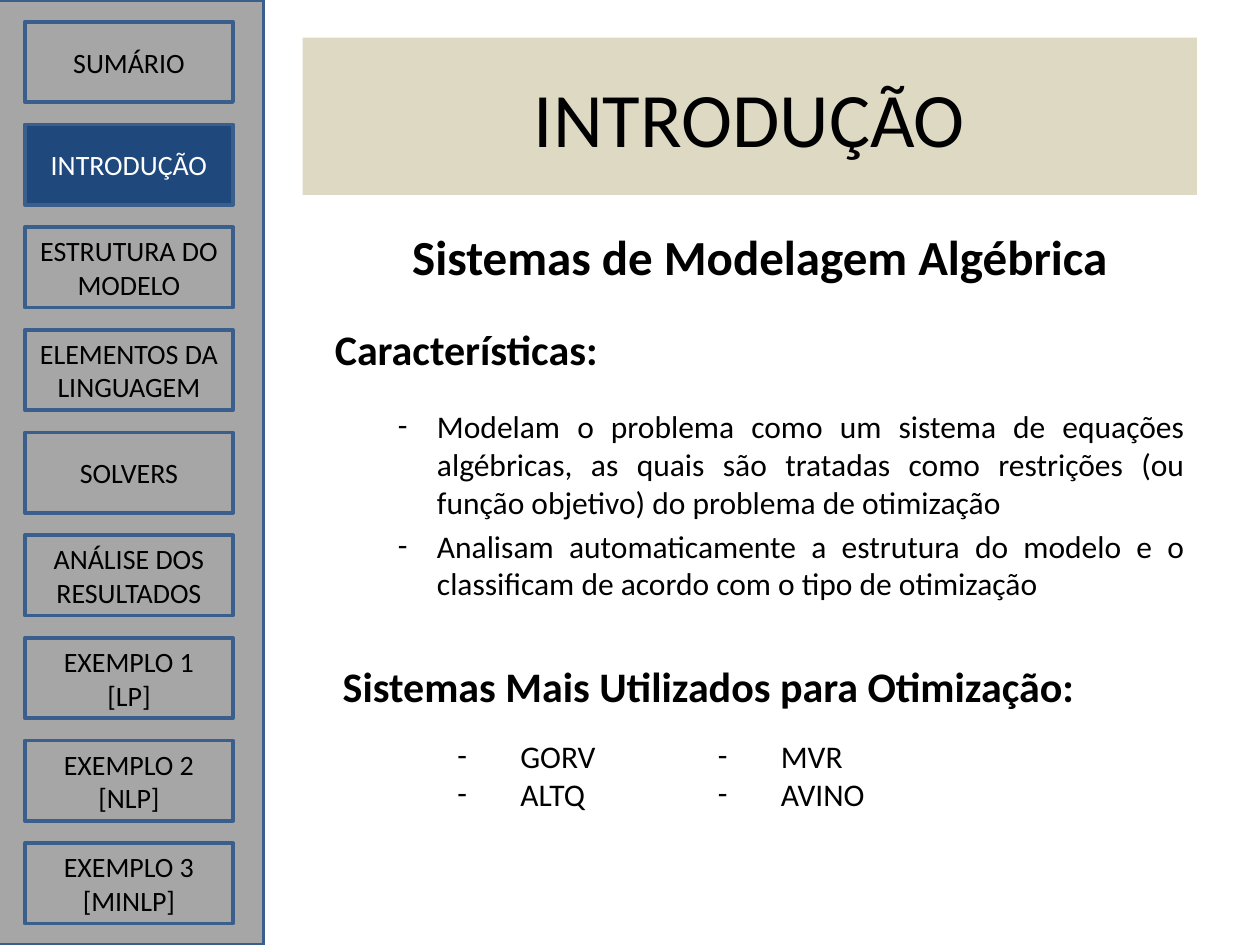
from pptx import Presentation
from pptx.dml.color import RGBColor
from pptx.enum.shapes import MSO_SHAPE
from pptx.enum.text import MSO_ANCHOR, PP_ALIGN
from pptx.oxml.ns import qn
from pptx.util import Cm, Pt
from lxml.etree import SubElement

BLACK = RGBColor(0x00, 0x00, 0x00)
WHITE = RGBColor(0xFF, 0xFF, 0xFF)
SAND = RGBColor(0xDD, 0xD9, 0xC3)
GREY = RGBColor(0xA6, 0xA6, 0xA6)
NAVY = RGBColor(0x1F, 0x49, 0x7D)
EDGE = RGBColor(0x3A, 0x5F, 0x8C)


def write(box, rows):
    frame = box.text_frame
    frame.word_wrap = True
    for index, (text, size, color, bold, layout, indent) in enumerate(rows):
        para = frame.paragraphs[0] if index == 0 else frame.add_paragraph()
        for name, value in layout.items():
            setattr(para, name, value)
        span = para.add_run()
        span.text = text
        font = {"name": "Calibri", "size": Pt(size), "bold": bold}
        for name, value in font.items():
            setattr(span.font, name, value)
        span.font.color.rgb = color
        if indent:
            margin, hanging = indent
            props = para._p.get_or_add_pPr()
            props.set("marL", str(Cm(margin)))
            props.set("indent", str(Cm(-hanging)))
            if hanging:
                SubElement(props, qn("a:buFont")).set("typeface", "Calibri")
                SubElement(props, qn("a:buChar")).set("char", "-")


def add_panel(page, place, fill, edge=None):
    panel = page.shapes.add_shape(MSO_SHAPE.RECTANGLE, *map(Cm, place))
    panel.shadow.inherit = False
    panel.fill.solid()
    panel.fill.fore_color.rgb = fill
    if edge:
        panel.line.color.rgb = edge
        panel.line.width = Pt(2)
    else:
        panel.line.fill.background()
    panel.text_frame.vertical_anchor = MSO_ANCHOR.MIDDLE
    return panel


deck = Presentation()
deck.slide_width, deck.slide_height = Cm(25.4), Cm(19.05)
page = deck.slides.add_slide(deck.slide_layouts[6])
centred = {"alignment": PP_ALIGN.CENTER}
justified = {"alignment": PP_ALIGN.JUSTIFY}

title = add_panel(page, (6.1, 0.76, 18.03, 3.17), SAND)
write(title, [("INTRODUÇÃO", 44, BLACK, False, centred, None)])

add_panel(page, (-0.1, 0, 5.41, 19.05), GREY, EDGE)
menu = [
    ["SUMÁRIO"], ["INTRODUÇÃO"], ["ESTRUTURA DO MODELO"],
    ["ELEMENTOS DA LINGUAGEM"], ["SOLVERS"], ["ANÁLISE DOS RESULTADOS"],
    ["EXEMPLO 1", "[LP]"], ["EXEMPLO 2", "[NLP]"], ["EXEMPLO 3", "[MINLP]"],
]
for row, labels in enumerate(menu):
    fill, color = (NAVY, WHITE) if row == 1 else (GREY, BLACK)
    button = add_panel(page, (0.5, 0.44 + 2.07 * row, 4.2, 1.62), fill, EDGE)
    write(button, [(label, 16, color, False, centred, None) for label in labels])

content = [
    ("Sistemas de Modelagem Algébrica", 28, True, centred, 0, None),
    ("Características:", 24, True, justified, 21.5, None),
    ("Modelam o problema como um sistema de equações algébricas, as quais são "
     "tratadas como restrições (ou função objetivo) do problema de otimização",
     18, False, justified, 19, (2.06, 0.79)),
    ("Analisam automaticamente a estrutura do modelo e o classificam de acordo "
     "com o tipo de otimização", 18, False, justified, 3.6, (2.06, 0.79)),
    ("Sistemas Mais Utilizados para Otimização:", 24, True, justified, 33, (0.16, 0)),
]
body = page.shapes.add_textbox(Cm(6.5), Cm(4.45), Cm(17.63), Cm(11.79))
write(body, [(text, size, BLACK, bold, {**layout, "space_before": Pt(gap)}, indent)
             for text, size, bold, layout, gap, indent in content])

for left, width, systems in [(7.7, 12.7, ["GORV", "ALTQ"]),
                             (12.95, 5.77, ["MVR", "AVINO"])]:
    column = page.shapes.add_textbox(Cm(left), Cm(14.73), Cm(width), Cm(1.8))
    write(column, [(system, 18, BLACK, False, justified, (2.54, 1.27))
                   for system in systems])

deck.save("out.pptx")
